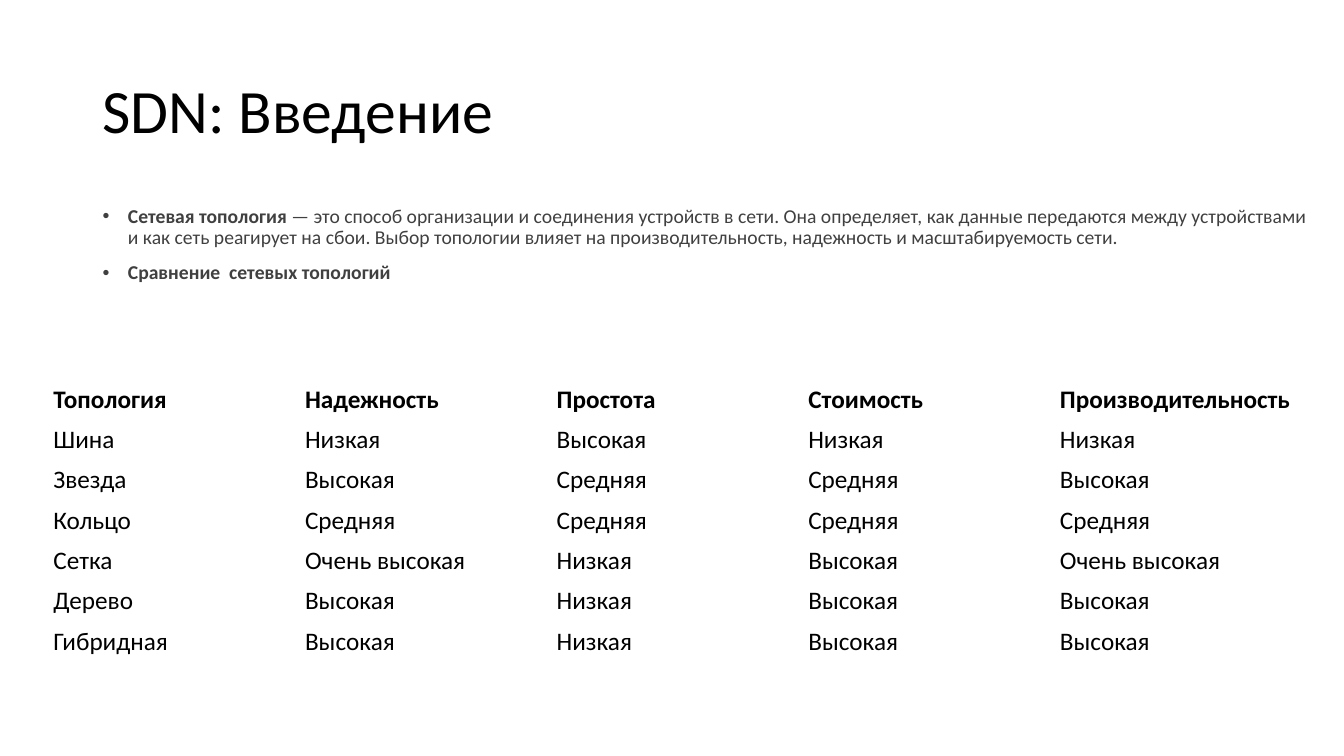
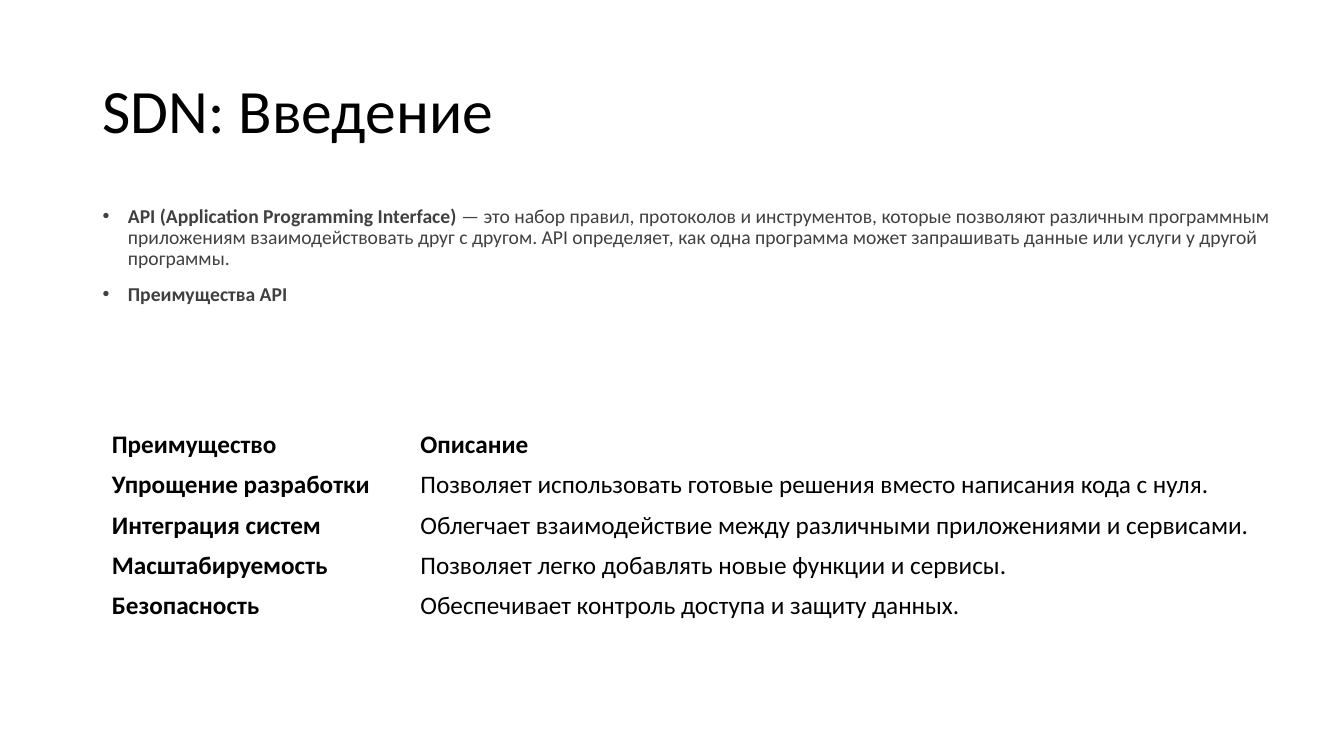
from lxml.etree import SubElement
from pptx import Presentation
from pptx.dml.color import RGBColor
from pptx.enum.text import MSO_ANCHOR as Anchor
from pptx.oxml.ns import qn
from pptx.util import Inches, Pt

COLORS = {"title": "000000", "body": "404040", "cell": "000000"}
SIZES = {"title": 44, "body": 14, "cell": 18}
FONT = "Calibri"
LEFT = 0.92
ROW_HEIGHT = 0.4


class Board:
    def __init__(self):
        self.deck = Presentation()
        self.deck.slide_width = Inches(13.33)
        self.deck.slide_height = Inches(7.5)
        self.page = None

    def add_page(self, title):
        self.page = self.deck.slides.add_slide(self.deck.slide_layouts[6])
        frame = self.text_frame(LEFT, 0.4, 11.5, 1.45, Anchor.MIDDLE)
        para = frame.paragraphs[0]
        para.text = title
        para.line_spacing = 0.9
        self.style(para, "title")

    def style(self, para, role):
        para.font.name = FONT
        para.font.size = Pt(SIZES[role])
        para.font.color.rgb = RGBColor.from_string(COLORS[role])

    def text_frame(self, left, top, width, height, anchor):
        box = self.page.shapes.add_textbox(
            Inches(left), Inches(top), Inches(width), Inches(height))
        frame = box.text_frame
        frame.word_wrap = True
        frame.vertical_anchor = anchor
        return frame

    def bullets(self, items):
        frame = self.text_frame(LEFT, 2, 12.29, 5.19, Anchor.TOP)
        for index, (term, detail) in enumerate(items):
            para = frame.add_paragraph() if index else frame.paragraphs[0]
            para.line_spacing = 0.9
            para.space_before = Pt(10)
            self.style(para, "body")
            self.bullet(para)
            span = para.add_run()
            span.text = term
            span.font.bold = True
            if detail:
                para.add_run().text = detail

    def bullet(self, para):
        props = para._p.get_or_add_pPr()
        props.set("marL", str(Inches(0.25)))
        props.set("indent", str(-Inches(0.25)))
        mark_font = SubElement(props, qn("a:buFont"))
        mark_font.set("typeface", "Arial")
        mark = SubElement(props, qn("a:buChar"))
        mark.set("char", "•")
        text_style = props.find(qn("a:defRPr"))
        if text_style is not None:
            props.append(text_style)

    def table(self, left, top, widths, rows, bold_first_column=False):
        table = self.page.shapes.add_table(
            len(rows), len(widths), Inches(left), Inches(top),
            Inches(sum(widths)), Inches(ROW_HEIGHT * len(rows))).table
        table.first_row = False
        table.horz_banding = False
        for column, width in zip(table.columns, widths):
            column.width = Inches(width)
        for row_index, row in enumerate(rows):
            for column_index, text in enumerate(row):
                cell = table.cell(row_index, column_index)
                cell.fill.background()
                cell.vertical_anchor = Anchor.MIDDLE
                para = cell.text_frame.paragraphs[0]
                para.text = text
                self.style(para, "cell")
                para.font.bold = row_index == 0 or (
                    bold_first_column and column_index == 0)


TITLE = "SDN: Введение"
LOW, MEDIUM, HIGH, TOP = "Низкая", "Средняя", "Высокая", "Очень высокая"

board = Board()

board.add_page(TITLE)
board.bullets([
    ("Сетевая топология",
     "\u00a0— это способ организации и соединения устройств в сети. "
     "Она определяет, как данные передаются между устройствами и как сеть "
     "реагирует на сбои. Выбор топологии влияет на производительность, "
     "надежность и масштабируемость сети."),
    ("Сравнение\u00a0 сетевых топологий", ""),
])
board.table(0.43, 3.76, [12.48 / 5] * 5, [
    ("Топология", "Надежность", "Простота", "Стоимость", "Производительность"),
    ("Шина", LOW, HIGH, LOW, LOW),
    ("Звезда", HIGH, MEDIUM, MEDIUM, HIGH),
    ("Кольцо", MEDIUM, MEDIUM, MEDIUM, MEDIUM),
    ("Сетка", TOP, LOW, HIGH, TOP),
    ("Дерево", HIGH, LOW, HIGH, HIGH),
    ("Гибридная", HIGH, LOW, HIGH, HIGH),
])

board.add_page(TITLE)
board.bullets([
    ("API (Application Programming Interface)",
     "\u00a0— это набор правил, протоколов и инструментов, которые позволяют "
     "различным программным приложениям взаимодействовать друг с другом. "
     "API определяет, как одна программа может запрашивать данные или услуги "
     "у другой программы."),
    ("Преимущества API", ""),
])
board.table(1.01, 4.21, [3.06, 8.67], [
    ("Преимущество", "Описание"),
    ("Упрощение разработки",
     "Позволяет использовать готовые решения вместо написания кода с нуля."),
    ("Интеграция систем",
     "Облегчает взаимодействие между различными приложениями и сервисами."),
    ("Масштабируемость", "Позволяет легко добавлять новые функции и сервисы."),
    ("Безопасность", "Обеспечивает контроль доступа и защиту данных."),
], bold_first_column=True)

board.deck.save("out.pptx")
